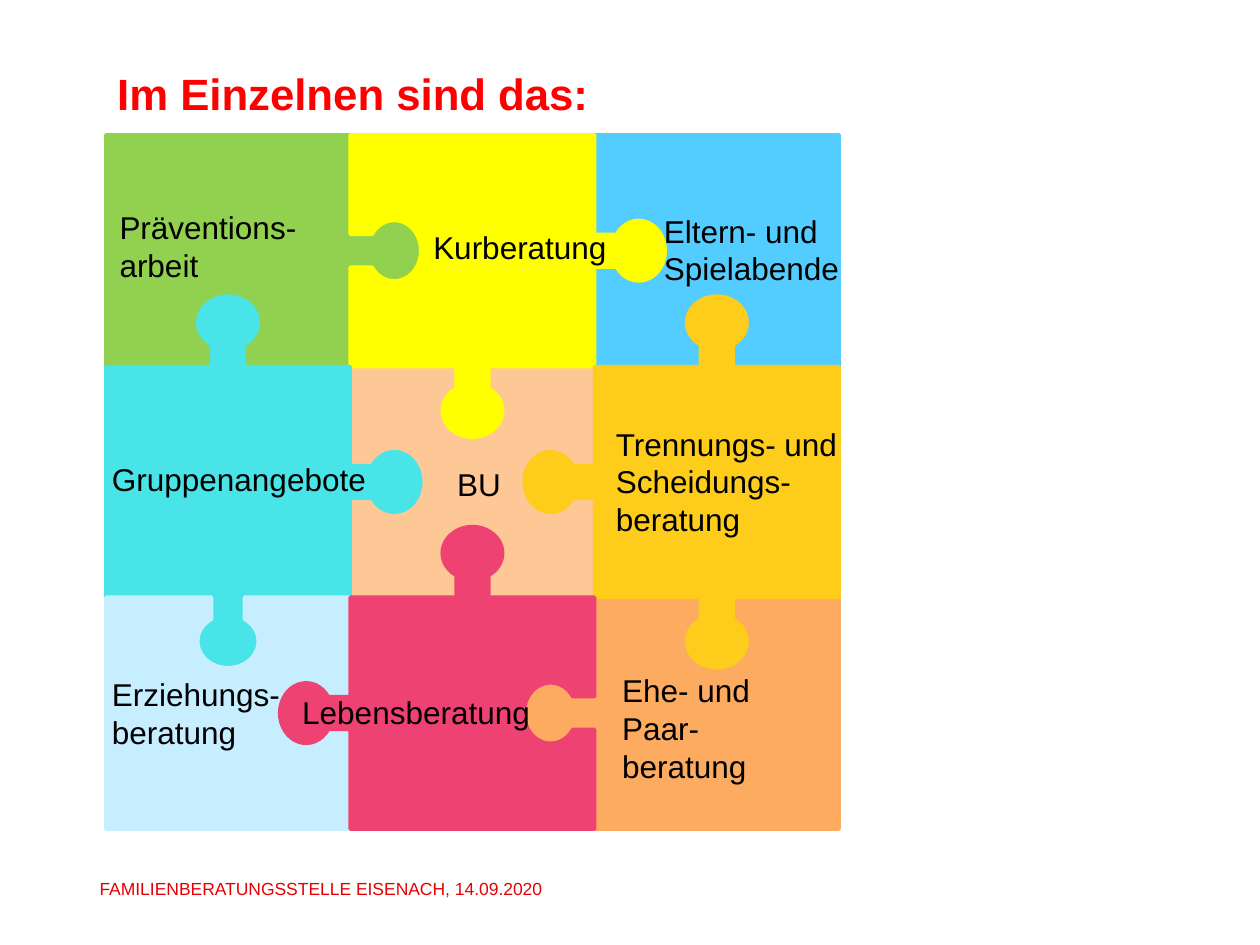
import math

import pptx
import pptx.dml.color
import pptx.enum.text
import pptx.util

Inches = pptx.util.Inches
Pt = pptx.util.Pt
RGBColor = pptx.dml.color.RGBColor
Anchor = pptx.enum.text.MSO_ANCHOR
AutoSize = pptx.enum.text.MSO_AUTO_SIZE

GREEN = RGBColor(0x92, 0xD0, 0x50)
BLUE = RGBColor(0x53, 0xCC, 0xFF)
PEACH = RGBColor(0xFD, 0xC7, 0x96)
YELLOW = RGBColor(0xFF, 0xFF, 0x00)
TURQUOISE = RGBColor(0x48, 0xE4, 0xE8)
ORANGE = RGBColor(0xFC, 0xAB, 0x61)
GOLD = RGBColor(0xFE, 0xCD, 0x1B)
PALE_BLUE = RGBColor(0xC6, 0xEE, 0xFF)
PINK = RGBColor(0xEE, 0x42, 0x73)
BLACK = RGBColor(0x00, 0x00, 0x00)
RED = RGBColor(0xFF, 0x00, 0x00)
FOOTER_RED = RGBColor(0xE6, 0x00, 0x04)

COLUMN_EDGES = [0.84, 2.78, 4.72, 6.66]
ROW_EDGES = [1.07, 2.91, 4.74, 6.58]

# Knob: half-width of the neck, distance of the head's centre, head radii
NECK, HEAD_DISTANCE, HEAD_DEPTH, HEAD_WIDTH = 0.13, 0.35, 0.21, 0.24
ARC_STEPS = 32

# Column, row, colour, sides (top, right, bottom, left: 1 knob, -1 socket, 0 flat)
PIECES = [
    (0, 0, GREEN, (0, 1, -1, 0)),
    (2, 0, BLUE, (0, 0, -1, -1)),
    (1, 1, PEACH, (-1, -1, -1, -1)),
    (1, 0, YELLOW, (0, 1, 1, -1)),
    (0, 1, TURQUOISE, (1, 1, 1, 0)),
    (2, 2, ORANGE, (-1, 0, 0, 1)),
    (2, 1, GOLD, (1, 0, 1, 1)),
    (0, 2, PALE_BLUE, (-1, -1, 0, 0)),
    (1, 2, PINK, (1, -1, 0, 1)),
]

# Left, top, width, height, paragraphs
LABELS = [
    (3.53, 3.64, 0.64, 0.4, ["BU"]),
    (3.34, 1.76, 1.68, 0.4, ["Kurberatung"]),
    (0.85, 1.6, 1.65, 0.71, ["Präventions-arbeit"]),
    (4.84, 5.28, 1.76, 0.71, ["Ehe- und Paar-beratung"]),
    (0.79, 3.6, 2.29, 0.4, ["Gruppenangebote"]),
    (2.3, 5.45, 2.58, 0.4, ["Lebensberatung"]),
    (0.79, 5.31, 1.84, 0.71, ["Erziehungs- beratung"]),
    (4.79, 3.32, 2.27, 1.01, ["Trennungs- und Scheidungs-", "beratung"]),
    (5.17, 1.63, 2.16, 0.71, ["Eltern- und Spielabende"]),
]


def set_attrs(obj, values):
    for name, value in values.items():
        setattr(obj, name, value)


def format_font(font, size, color, bold=False):
    set_attrs(font, {"name": "Arial", "size": Pt(size), "bold": bold})
    font.color.rgb = color


def side_points(start, end, knob):
    """Points of one side, walked clockwise, from after start up to end."""
    if not knob:
        return [end]
    (x0, y0), (x1, y1) = start, end
    length = math.hypot(x1 - x0, y1 - y0)
    ux, uy = (x1 - x0) / length, (y1 - y0) / length

    profile = [(-NECK, 0)]
    gap = math.asin(NECK / HEAD_WIDTH)
    for i in range(ARC_STEPS + 1):
        angle = gap + (2 * math.pi - 2 * gap) * i / ARC_STEPS
        profile.append((-HEAD_WIDTH * math.sin(angle),
                        HEAD_DISTANCE - HEAD_DEPTH * math.cos(angle)))
    profile.append((NECK, 0))

    mx, my = (x0 + x1) / 2, (y0 + y1) / 2
    return [(mx + ux * along + uy * out * knob, my + uy * along - ux * out * knob)
            for along, out in profile] + [end]


def add_piece(slide, column, row, color, sides):
    left, right = COLUMN_EDGES[column:column + 2]
    top, bottom = ROW_EDGES[row:row + 2]
    corners = [(left, top), (right, top), (right, bottom), (left, bottom)]
    points = []
    for i, knob in enumerate(sides):
        points += side_points(corners[i], corners[(i + 1) % 4], knob)

    builder = slide.shapes.build_freeform(Inches(left), Inches(top))
    builder.add_line_segments([(Inches(x), Inches(y)) for x, y in points])
    sp = builder.convert_to_shape()
    sp.shadow.inherit = False
    sp.fill.solid()
    sp.fill.fore_color.rgb = color
    sp.line.color.rgb = color
    sp.line.width = Pt(2)


def add_text(slide, box, paragraphs, size, color, frame=None):
    tf = slide.shapes.add_textbox(*map(Inches, box)).text_frame
    set_attrs(tf, {"word_wrap": True, "auto_size": AutoSize.SHAPE_TO_FIT_TEXT,
                   **(frame or {})})
    for i, text in enumerate(paragraphs):
        p = tf.paragraphs[0] if i == 0 else tf.add_paragraph()
        r = p.add_run()
        r.text = text
        format_font(r.font, size, color)


def add_title(slide, text):
    sp = slide.shapes.title
    set_attrs(sp, {"left": Inches(0.83), "top": Inches(0.48),
                   "width": Inches(5.77), "height": Inches(0.52)})
    tf = sp.text_frame
    set_attrs(tf, {"word_wrap": True, "auto_size": AutoSize.NONE,
                   "vertical_anchor": Anchor.MIDDLE})
    p = tf.paragraphs[0]
    p.alignment = pptx.enum.text.PP_ALIGN.LEFT
    r = p.add_run()
    r.text = text
    format_font(r.font, 25, RED, bold=True)


def main():
    prs = pptx.Presentation()
    set_attrs(prs, {"slide_width": Inches(10), "slide_height": Inches(7.5)})
    slide = prs.slides.add_slide(prs.slide_layouts[5])

    add_title(slide, "Im Einzelnen sind das:")
    for piece in PIECES:
        add_piece(slide, *piece)
    for *box, paragraphs in LABELS:
        add_text(slide, box, paragraphs, 18, BLACK)
    no_margins = dict.fromkeys(
        ("margin_left", "margin_top", "margin_right", "margin_bottom"), 0)
    add_text(slide, (0.79, 6.97, 7.28, 0.17),
             ["FAMILIENBERATUNGSSTELLE EISENACH, 14.09.2020"],
             10, FOOTER_RED, no_margins)
    prs.save("out.pptx")


if __name__ == "__main__":
    main()
